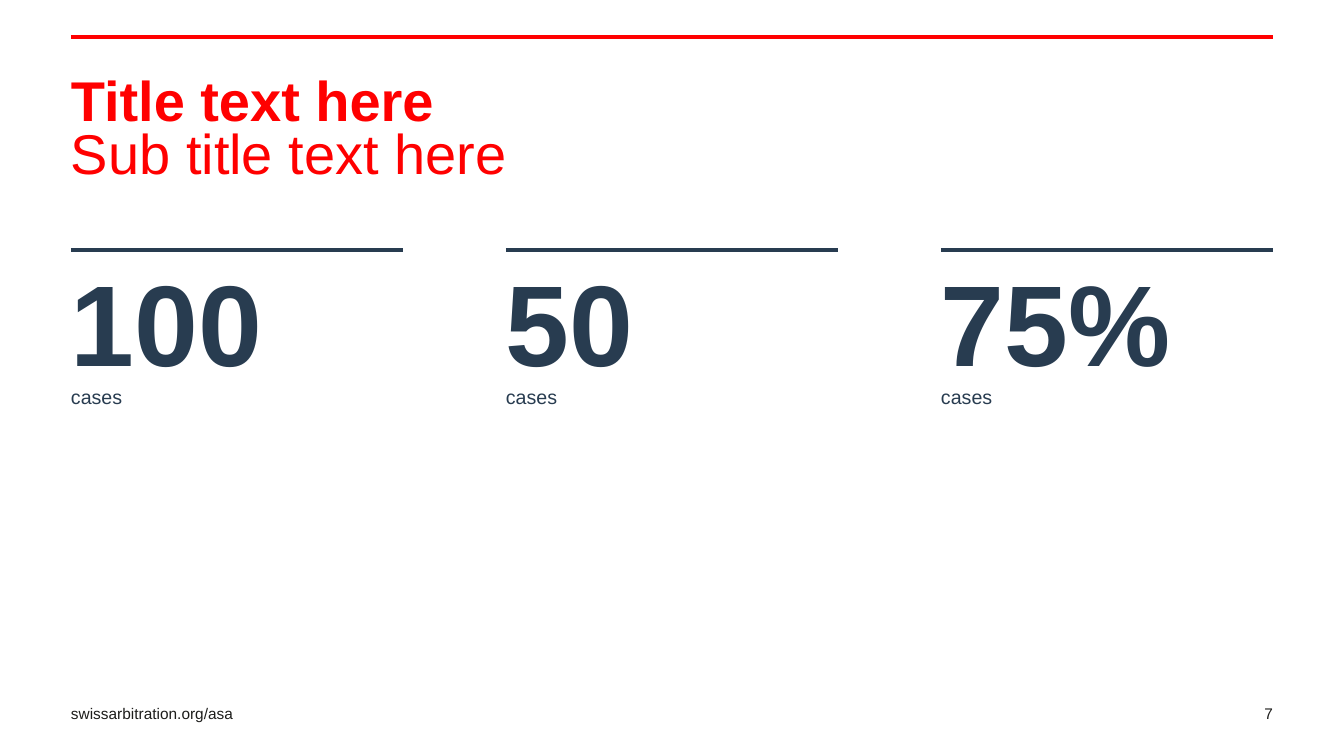
from pptx import Presentation
from pptx.dml.color import RGBColor
from pptx.enum.shapes import MSO_CONNECTOR
from pptx.enum.text import MSO_ANCHOR, PP_ALIGN
from pptx.oxml.ns import qn
from pptx.util import Pt
from lxml import etree

LINE = MSO_CONNECTOR.STRAIGHT
TOP, MID, BASE = MSO_ANCHOR.TOP, MSO_ANCHOR.MIDDLE, MSO_ANCHOR.BOTTOM
LEFT, RIGHT = PP_ALIGN.LEFT, PP_ALIGN.RIGHT
COLORS = {"red": "FF0000", "navy": "283C50", "ink": "1D1D1B"}
WIDE, HIGH = 1344, 756
EDGE = 71
FULL = WIDE - 2 * EDGE
STATS = [("100", "cases"), ("50", "cases"), ("75%", "cases")]


def px(n):
    return round(n * 914400 / 100.8)


def tint(name):
    return RGBColor.from_string(COLORS[name])


def add_text(slide, box, runs, size, color, align=LEFT, anchor=TOP, lead=None):
    """Add one paragraph; runs are (text, bold) pairs split by line breaks."""
    frame = slide.shapes.add_textbox(*map(px, box)).text_frame
    frame.word_wrap = True
    frame.vertical_anchor = anchor
    frame.margin_left = frame.margin_right = 0
    frame.margin_top = frame.margin_bottom = 0
    para = frame.paragraphs[0]
    para.alignment = align
    if lead:
        para.line_spacing = Pt(lead)
    for i, (text, bold) in enumerate(runs):
        if i:
            para.add_line_break()
        run = para.add_run()
        run.text = text
        font = run.font
        font.name, font.size, font.bold = "Arial", Pt(size), bold
        font.color.rgb = tint(color)


def add_rule(slide, x, y, w, color):
    rule = slide.shapes.add_connector(LINE, px(x), px(y), px(x + w), px(y))
    rule.line.color.rgb = tint(color)
    rule.line.width = Pt(3)
    etree.SubElement(rule._element.spPr, qn("a:effectLst"))


def add_head(slide, x, y, w):
    add_rule(slide, x, y, w, "red")
    add_text(slide, (x, y + 13, w - 65, 136),
             [("Title text here", True), ("Sub title text here", False)],
             40, "red", anchor=BASE, lead=38)


def add_stat(slide, x, y, w, value, label):
    add_rule(slide, x, y, w, "navy")
    add_text(slide, (x, y, w, 139), [(value, True)], 82, "navy", anchor=BASE)
    add_text(slide, (x, y + 135, w, 24), [(label, False)], 14, "navy")


def add_stats(slide, x, y, w):
    col = 332
    step = (w - col) / (len(STATS) - 1)
    for i, (value, label) in enumerate(STATS):
        add_stat(slide, x + i * step, y, col, value, label)


def add_foot(slide, x, y, w):
    add_text(slide, (x, y, 364, 20), [("swissarbitration.org/asa", False)],
             11, "ink", anchor=MID)
    add_text(slide, (x + w - 36, y, 36, 20), [("7", False)],
             11, "ink", align=RIGHT, anchor=MID)


def main():
    deck = Presentation()
    deck.slide_width, deck.slide_height = px(WIDE), px(HIGH)
    slide = deck.slides.add_slide(deck.slide_layouts[6])
    add_head(slide, EDGE, 37, FULL)
    add_stats(slide, EDGE, 250, FULL)
    add_foot(slide, EDGE, 703, FULL)
    deck.save("out.pptx")


if __name__ == "__main__":
    main()
